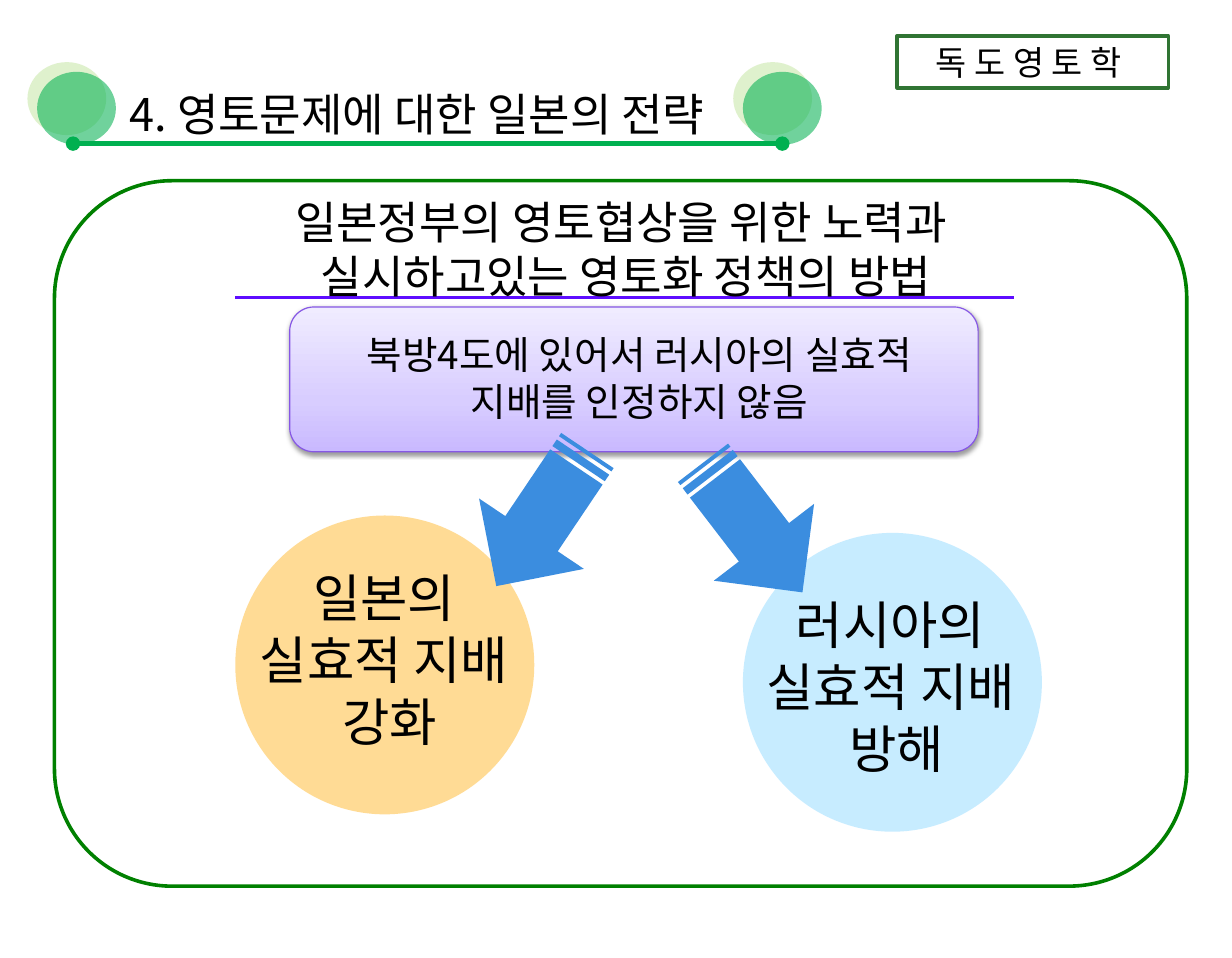
"""Build a slide on Japan's strategy in territorial disputes."""
from dataclasses import dataclass

import lxml.etree
import pptx
import pptx.dml.color
import pptx.enum.shapes
import pptx.enum.text
import pptx.oxml
import pptx.oxml.ns
import pptx.util

Inches = pptx.util.Inches
Pt = pptx.util.Pt
RGBColor = pptx.dml.color.RGBColor
Shape = pptx.enum.shapes.MSO_SHAPE
Align = pptx.enum.text.PP_ALIGN
qn = pptx.oxml.ns.qn


@dataclass(frozen=True)
class Theme:
    font: str = "Noto Sans CJK KR"
    text: str = "000000"
    white: str = "FFFFFF"
    frame: str = "008000"
    label_border: str = "307433"
    green: str = "00B050"
    light_green: str = "92D050"
    rule: str = "5E0DFF"
    claim_border: str = "8657E5"
    claim_stops: tuple = ((0, "C9B9FF"), (35, "D8CDFF"), (100, "F0ECFF"))
    orange: str = "FFCC66"
    blue: str = "66CCFF"
    arrow: str = "3B8DDF"
    label_size: int = 21
    claim_size: int = 24
    title_size: int = 28
    circle_size: int = 32


theme = Theme()
namespace = f'xmlns:a="{pptx.oxml.ns.nsuri("a")}"'

deck = pptx.Presentation()
deck.slide_width, deck.slide_height = Inches(10.63), Inches(8.27)
page = deck.slides.add_slide(deck.slide_layouts[6])


def add_figure(kind, place, fill=None, alpha=100, line=None, width=1, shadow=None):
    figure = page.shapes.add_shape(kind, *map(Inches, place))
    figure.shadow.inherit = False
    if fill:
        figure.fill.solid()
        figure.fill.fore_color.rgb = RGBColor.from_string(fill)
        color = figure.fill._xPr.find(".//" + qn("a:srgbClr"))
        lxml.etree.SubElement(color, qn("a:alpha"), val=str(alpha * 1000))
    else:
        figure.fill.background()
    if line:
        figure.line.color.rgb = RGBColor.from_string(line)
        figure.line.width = Pt(width)
    else:
        figure.line.fill.background()
    if shadow:
        color, opacity, blur, distance, angle = shadow
        effects = figure._element.spPr.find(qn("a:effectLst"))
        effects.append(pptx.oxml.parse_xml(
            f'<a:outerShdw {namespace} blurRad="{Pt(blur)}" dist="{Pt(distance)}" '
            f'dir="{angle * 60000}" algn="ctr" rotWithShape="0"><a:srgbClr val="{color}">'
            f'<a:alpha val="{opacity * 1000}"/></a:srgbClr></a:outerShdw>'))
    return figure


def write(box, text, size, align=Align.CENTER):
    frame = box.text_frame
    frame.text = text
    frame.word_wrap = True
    frame.auto_size = pptx.enum.text.MSO_AUTO_SIZE.SHAPE_TO_FIT_TEXT
    for para in frame.paragraphs:
        para.alignment = align
        para.line_spacing = Pt(size * 1.2)
        for span in para.runs:
            span.font.name = theme.font
            span.font.size = Pt(size)
            span.font.color.rgb = RGBColor.from_string(theme.text)
            east_asian = lxml.etree.SubElement(span.font._element, qn("a:ea"))
            east_asian.set("typeface", theme.font)


add_figure(Shape.ROUNDED_RECTANGLE, (0.47, 1.56, 9.77, 6.09), line=theme.frame, width=2.25)
label = add_figure(Shape.RECTANGLE, (7.74, 0.31, 2.34, 0.45), theme.white,
                   line=theme.label_border, width=2)
write(label, "독 도 영 토 학 ", theme.label_size)

for left in (0.32, 6.41):
    add_figure(Shape.OVAL, (left, 0.62, 0.68, 0.63), theme.green, 56,
               shadow=(theme.light_green, 50, 0, 8.5, 225))

for left, right, top, color, width, ends in (
    (0.63, 6.75, 1.24, theme.green, 3, ("headEnd", "tailEnd")),
    (2.03, 8.75, 2.57, theme.rule, 2, ()),
):
    rule = page.shapes.add_connector(pptx.enum.shapes.MSO_CONNECTOR.STRAIGHT,
                                     Inches(left), Inches(top), Inches(right), Inches(top))
    rule.line.color.rgb = RGBColor.from_string(color)
    rule.line.width = Pt(width)
    for end in ends:
        lxml.etree.SubElement(rule.line._ln, qn(f"a:{end}"), type="oval")
    lxml.etree.SubElement(rule._element.spPr, qn("a:effectLst"))

claim = add_figure(Shape.ROUNDED_RECTANGLE, (2.5, 2.65, 5.94, 1.25), line=theme.claim_border,
                   width=0.75, shadow=(theme.text, 38, 3.1, 1.6, 90))
claim.fill.gradient()
claim.fill.gradient_angle = 90
stops = claim._element.spPr.find(".//" + qn("a:gsLst"))
for stop in list(stops):
    stops.remove(stop)
for position, color in theme.claim_stops:
    stop = lxml.etree.SubElement(stops, qn("a:gs"), pos=str(position * 1000))
    lxml.etree.SubElement(stop, qn("a:srgbClr"), val=color)

for left, top, color, alpha in ((2.03, 4.45, theme.orange, 69), (6.41, 4.6, theme.blue, 36)):
    add_figure(Shape.OVAL, (left, top, 2.58, 2.58), color, alpha)

for place, text, size, align in (
    ((1.02, 0.7, 5.39, 0.57), "4. 영토문제에 대한 일본의 전략", theme.title_size, Align.LEFT),
    ((2.43, 1.63, 5.94, 1.04), "일본정부의 영토협상을 위한 노력과 \n실시하고있는 영토화 정책의 방법",
     theme.title_size, Align.CENTER),
    ((2.74, 2.81, 5.55, 0.91), "북방4도에 있어서 러시아의 실효적 지배를 인정하지 않음",
     theme.claim_size, Align.CENTER),
    ((1.96, 4.84, 2.81, 1.72), "일본의 \n실효적 지배 \n강화", theme.circle_size, Align.CENTER),
    ((6.33, 5.07, 2.81, 1.72), "러시아의 \n실효적 지배 \n방해", theme.circle_size, Align.CENTER),
):
    write(page.shapes.add_textbox(*map(Inches, place)), text, size, align)

for left, top, angle in ((3.97, 3.93, 123.9), (5.79, 4.01, 52.5)):
    arrow = add_figure(Shape.STRIPED_RIGHT_ARROW, (left, top, 1.41, 1.09), theme.arrow)
    arrow.rotation = angle

deck.save("out.pptx")
